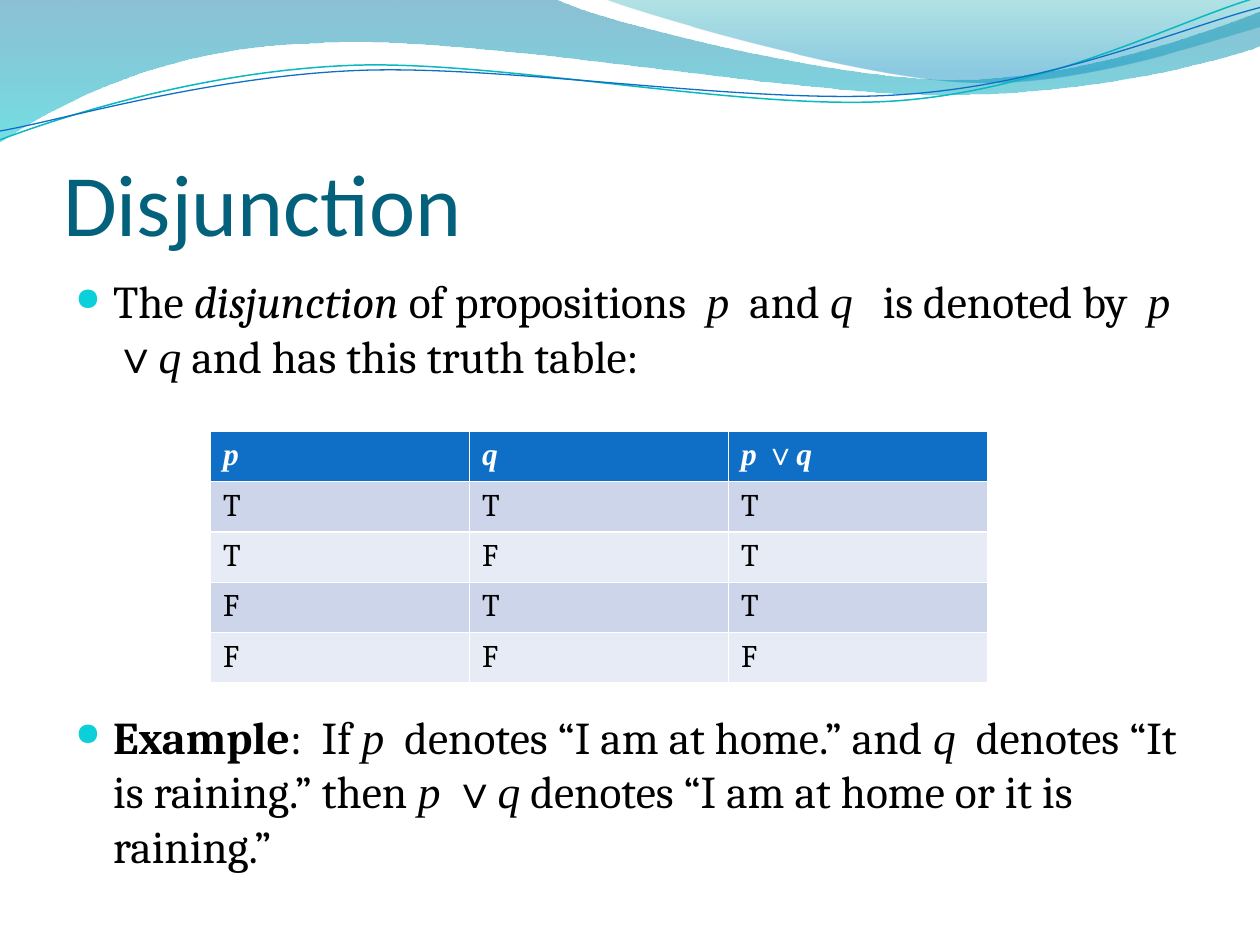
from lxml import etree
from pptx import Presentation
from pptx.dml.color import RGBColor
from pptx.enum import text
from pptx.oxml.ns import qn
from pptx.util import Inches, Pt

COLORS = {
    "title": "04617B", "text": "000000", "white": "FFFFFF", "bullet": "0BD0D9",
    "header": "0F6FC6", "band_dark": "CCD5EA", "band_light": "E7EBF5",
    "teal_line": "0AB8BF", "blue_line": "0F6FC6",
    "wave_top": "0074A1", "wave_bottom": "00C6CF",
    "crest_top": "00A1A9", "crest_bottom": "008BBF",
}
# style key: (font, bold, italic)
STYLES = {
    "plain": ("Cambria", False, False),
    "bold": ("Cambria", True, False),
    "italic": ("Cambria", False, True),
    "variable": ("Times New Roman", False, True),
    "symbol": ("Times New Roman", False, False),
    "head_variable": ("Times New Roman", True, True),
    "head_symbol": ("Times New Roman", True, False),
}


def rgb(name):
    return RGBColor.from_string(COLORS[name])


def add_xml(parent, tag, **attrs):
    return etree.SubElement(parent, qn(tag), attrs)


class SlideBuilder:
    def __init__(self, slide):
        self.slide = slide
        self.backdrop_count = 0

    def outline(self, start, pieces, close):
        """Backdrop outline; a piece is a line (x, y) or a Bezier (x1, y1, x2, y2, x, y)."""
        builder = self.slide.shapes.build_freeform(*map(Inches, start))
        for piece in pieces:
            emu = [Inches(value) for value in piece]
            builder.add_line_segments(list(zip(emu[::2], emu[1::2])), close=False)
        if close:
            builder.add_line_segments([], close=True)
        sp = builder.convert_to_shape()
        sp.shadow.inherit = False
        lines = iter(list(sp._element.iter(qn("a:lnTo"))))
        for piece in pieces:
            first = next(lines)
            if len(piece) == 6:
                first.tag = qn("a:cubicBezTo")
                for line in (next(lines), next(lines)):
                    first.append(line[0])
                    line.getparent().remove(line)
        self.slide.shapes._spTree.insert(2 + self.backdrop_count, sp._element)
        self.backdrop_count += 1
        return sp

    def wave(self, start, pieces, stops):
        """Closed shape with a top-to-bottom gradient of (colour, position, opacity %)."""
        sp = self.outline(start, pieces, True)
        sp.line.fill.background()
        sp.fill.gradient()
        sp.fill.gradient_angle = 270
        for stop, (color, position, _) in zip(sp.fill.gradient_stops, stops):
            stop.color.rgb = rgb(color)
            stop.position = position
        for clr, (_, _, opacity) in zip(sp._element.spPr.iter(qn("a:srgbClr")), stops):
            add_xml(clr, "a:alpha", val=str(opacity * 1000))

    def strand(self, start, pieces, color, width):
        sp = self.outline(start, pieces, False)
        sp.fill.background()
        sp.line.color.rgb = rgb(color)
        sp.line.width = Pt(width)

    def title(self, words, left, top, width, height):
        sp = self.slide.shapes.title
        sp.left, sp.top, sp.width, sp.height = map(Inches, (left, top, width, height))
        tf = sp.text_frame
        tf.text = words
        tf.vertical_anchor = text.MSO_ANCHOR.BOTTOM
        tf.margin_left = tf.margin_right = tf.margin_bottom = 0
        p = tf.paragraphs[0]
        p.alignment = text.PP_ALIGN.LEFT
        font = p.runs[0].font
        font.name, font.size, font.color.rgb = "Calibri", Pt(50), rgb("title")

    def runs(self, p, parts, size, color):
        for words, style in parts:
            r = p.add_run()
            r.text = words
            font = r.font
            font.name, font.bold, font.italic = STYLES[style]
            font.size, font.color.rgb = Pt(size), rgb(color)

    def bullets(self, items, left, top, width, height):
        """Bulleted text from (space before in points, runs) pairs."""
        box = self.slide.shapes.add_textbox(*map(Inches, (left, top, width, height)))
        tf = box.text_frame
        tf.word_wrap = True
        for i, (gap, parts) in enumerate(items):
            p = tf.paragraphs[0] if i == 0 else tf.add_paragraph()
            p.space_before = Pt(gap)
            pPr = p._p.get_or_add_pPr()
            pPr.set("marL", str(Inches(0.3)))
            pPr.set("indent", str(Inches(-0.3)))
            add_xml(add_xml(pPr, "a:buClr"), "a:srgbClr", val=COLORS["bullet"])
            add_xml(pPr, "a:buSzPct", val="70000")
            add_xml(pPr, "a:buChar", char="●")
            self.runs(p, parts, 26, "text")

    def truth_table(self, header, rows, left, top, width, height):
        frame = self.slide.shapes.add_table(
            len(rows) + 1, len(header), *map(Inches, (left, top, width, height)))
        table = frame.table
        body = [[[(value, "plain")] for value in row] for row in rows]
        for i, row in enumerate([header] + body):
            table.rows[i].height = Inches(0.33 if i else 0.23)
            fill = "header" if i == 0 else "band_dark" if i % 2 else "band_light"
            for j, parts in enumerate(row):
                cell = table.cell(i, j)
                cell.fill.solid()
                cell.fill.fore_color.rgb = rgb(fill)
                self.runs(cell.text_frame.paragraphs[0], parts, 18,
                          "text" if i else "white")
        frame.height = Inches(height)


def main():
    prs = Presentation()
    prs.slide_width, prs.slide_height = Inches(10), Inches(7.5)
    s = SlideBuilder(prs.slides.add_slide(prs.slide_layouts[5]))

    s.wave((0, 0), [(4.4, -0.01),
                    (4.76, 0.17, 6.64, 0.63, 7.58, 0.63),
                    (8.53, 0.63, 9.58, 0.26, 10, 0.09),
                    (10.01, 0.36),
                    (9.83, 0.44, 8.7, 0.76, 7.46, 0.75),
                    (6.22, 0.75, 3.82, 0.28, 2.57, 0.34),
                    (1.29, 0.36, 0.46, 0.83, -0.01, 1.13)],
           [("wave_top", 0, 45), ("wave_bottom", 1, 55)])
    s.wave((4.79, -0.01), [(5.09, 0.11, 6.82, 0.62, 7.69, 0.65),
                           (8.56, 0.69, 9.61, 0.32, 10, 0.21),
                           (10, 0)],
           [("crest_top", 0, 30), ("crest_bottom", 0.8, 45)])
    s.strand((0, 1.11), [(0.48, 0.93, 1.58, 0.57, 2.77, 0.52),
                         (3.95, 0.47, 5.93, 0.89, 7.13, 0.8),
                         (8.33, 0.71, 9.38, 0.15, 9.98, -0.02)], "teal_line", 0.85)
    s.strand((0, 1.04), [(0.47, 0.96, 1.64, 0.61, 2.83, 0.56),
                         (4.03, 0.51, 5.97, 0.84, 7.17, 0.75),
                         (8.36, 0.67, 9.41, 0.21, 10, 0.06)], "blue_line", 0.75)

    s.title("Disjunction", 0.5, 0.77, 9, 1.25)
    p_or_q = [("p ", "variable"), ("∨", "symbol"), ("q", "variable")]
    definition = [("The ", "plain"), ("disjunction", "italic"),
                  (" of propositions  ", "plain"), ("p", "variable"),
                  ("  and ", "plain"), ("q", "variable"),
                  ("   is denoted by  ", "plain"), *p_or_q,
                  (" and has this truth table:", "plain")]
    example = [("Example", "bold"), (":  If ", "plain"), ("p", "variable"),
               ("  denotes “I am at home.” and ", "plain"), ("q", "variable"),
               ("  denotes “It is raining.” then ", "plain"), *p_or_q,
               (" denotes “I am at home or it is raining.”", "plain")]
    s.bullets([(5.2, definition), (186.5, example)], 0.5, 2.12, 9, 5.13)

    header = [[("p", "head_variable")], [("q", "head_variable")],
              [(words, "head_" + style) for words, style in p_or_q]]
    s.truth_table(header, ["TTT", "TFT", "FTT", "FFF"], 1.67, 3.42, 6.17, 2)
    prs.save("out.pptx")


if __name__ == "__main__":
    main()
